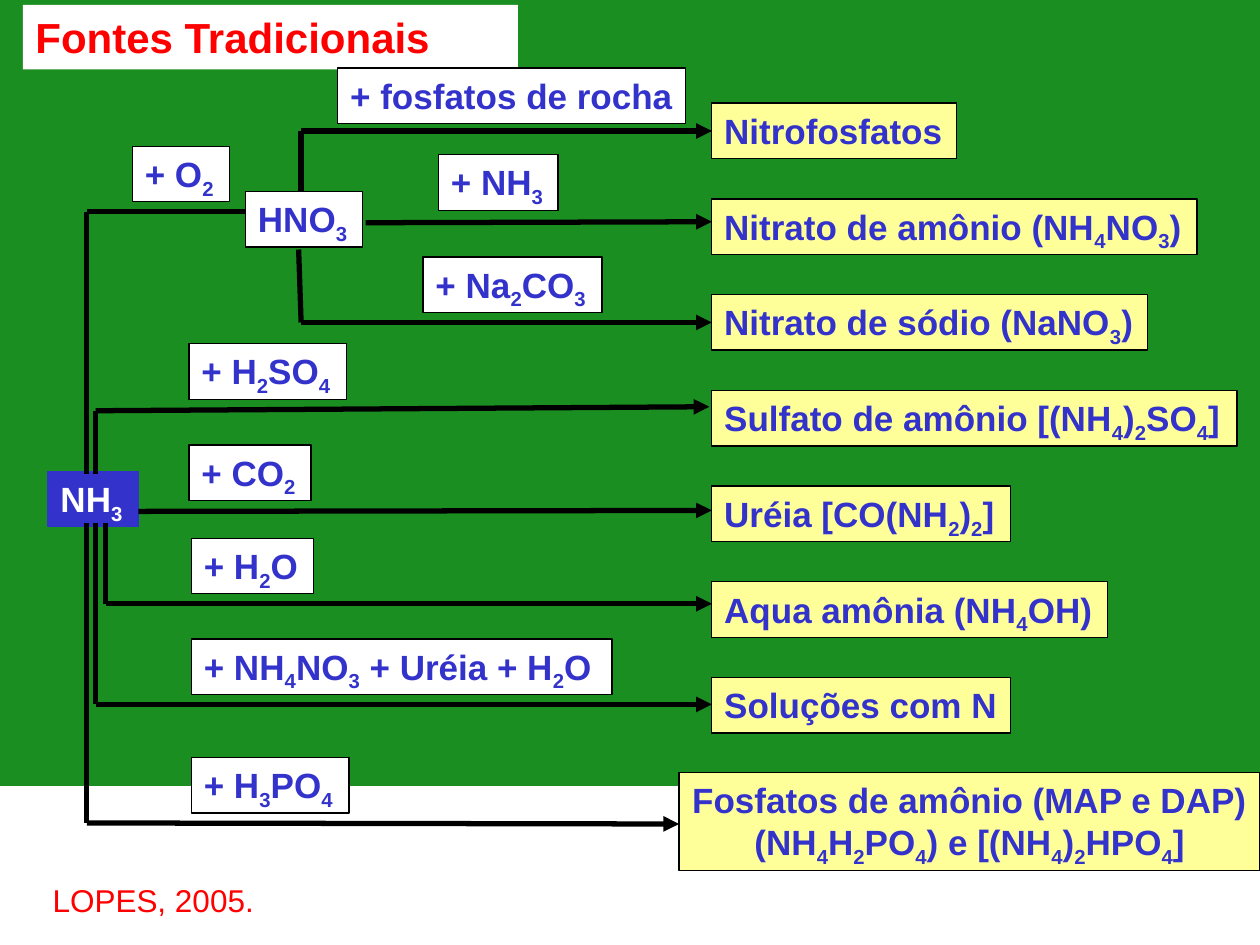
import itertools
from dataclasses import dataclass

import pptx
import pptx.dml.color
import pptx.enum.shapes
import pptx.enum.text
import pptx.oxml
import pptx.oxml.ns
import pptx.util

Cm = pptx.util.Cm
RGB = pptx.dml.color.RGBColor.from_string
PP_ALIGN = pptx.enum.text.PP_ALIGN
LABEL_HEIGHT = 1.12


@dataclass(frozen=True)
class Theme:
    font: str = "Arial"
    green: str = "1B8E21"
    white: str = "FFFFFF"
    yellow: str = "FFFF99"
    blue: str = "3333CC"
    red: str = "FF0000"
    black: str = "000000"
    title_size: int = 24
    label_size: int = 20
    source_size: int = 18
    border: float = 0.75
    route: float = 3


@dataclass(frozen=True)
class Box:
    """A region in centimetres."""
    left: float
    top: float
    width: float
    height: float

    def inner(self, left, top, width, height=LABEL_HEIGHT):
        return Box(self.left + left, self.top + top, width, height)

    def emu(self):
        return Cm(self.left), Cm(self.top), Cm(self.width), Cm(self.height)


THEME = Theme()


def style(paragraph, size, color, bold=True, align=PP_ALIGN.LEFT):
    paragraph.alignment = align
    font = paragraph.font
    font.name, font.size, font.bold = THEME.font, pptx.util.Pt(size), bold
    font.color.rgb = RGB(color)


def write_formula(paragraph, formula):
    """Write every digit of the formula as a subscript."""
    for is_index, letters in itertools.groupby(formula, str.isdigit):
        run = paragraph.add_run()
        run.text = "".join(letters)
        if is_index:
            run.font._element.set("baseline", "-25000")


def add_rectangle(slide, box, fill, line=None):
    rectangle = slide.shapes.add_shape(
        pptx.enum.shapes.MSO_SHAPE.RECTANGLE, *box.emu())
    rectangle.shadow.inherit = False
    rectangle.fill.solid()
    rectangle.fill.fore_color.rgb = RGB(fill)
    if line:
        rectangle.line.color.rgb = RGB(line)
        rectangle.line.width = pptx.util.Pt(THEME.border)
    else:
        rectangle.line.fill.background()
    return rectangle


def add_label(slide, box, formulas, fill=THEME.white, line=THEME.black,
              color=THEME.blue, align=PP_ALIGN.LEFT):
    frame = add_rectangle(slide, box, fill, line).text_frame
    frame.word_wrap = False
    frame.auto_size = pptx.enum.text.MSO_AUTO_SIZE.SHAPE_TO_FIT_TEXT
    frame.vertical_anchor = pptx.enum.text.MSO_ANCHOR.TOP
    for i, formula in enumerate(formulas.split("\n")):
        paragraph = frame.add_paragraph() if i else frame.paragraphs[0]
        write_formula(paragraph, formula)
        style(paragraph, THEME.label_size, color, align=align)


def add_route(slide, box, points, arrow=True):
    """Join the points by straight lines, with an arrowhead on the last."""
    places = [(Cm(box.left + x), Cm(box.top + y)) for x, y in points]
    for start, end in itertools.pairwise(places):
        segment = slide.shapes.add_connector(
            pptx.enum.shapes.MSO_CONNECTOR.STRAIGHT, *start, *end)
        segment.line.color.rgb = RGB(THEME.black)
        segment.line.width = pptx.util.Pt(THEME.route)
        if arrow and end == places[-1]:
            head = pptx.oxml.parse_xml(
                f'<a:tailEnd {pptx.oxml.ns.nsdecls("a")} type="triangle"/>')
            segment.line._get_or_add_ln().append(head)
        segment._element.spPr.append(pptx.oxml.parse_xml(
            f'<a:effectLst {pptx.oxml.ns.nsdecls("a")}/>'))


def add_title(slide, box):
    title = slide.shapes.title
    title.left, title.top, title.width, title.height = box.emu()
    title.fill.solid()
    title.fill.fore_color.rgb = RGB(THEME.white)
    frame = title.text_frame
    frame.text = "Fontes Tradicionais"
    frame.auto_size = pptx.enum.text.MSO_AUTO_SIZE.NONE
    frame.vertical_anchor = pptx.enum.text.MSO_ANCHOR.TOP
    style(frame.paragraphs[0], THEME.title_size, THEME.red)


def add_footer(slide, box):
    add_rectangle(slide, box, THEME.white)
    source = slide.shapes.add_textbox(*box.inner(0.81, 1.78, 4.57, 1.02).emu())
    frame = source.text_frame
    frame.word_wrap = False
    frame.text = "LOPES, 2005."
    style(frame.paragraphs[0], THEME.source_size, THEME.red, bold=False)


def add_products(slide, box):
    pitch, indent = 1.93, 0.66
    products = [
        ("Nitrofosfatos", 4.93),
        ("Nitrato de amônio (NH4NO3)", 9.78),
        ("Nitrato de sódio (NaNO3)", 8.79),
        ("Sulfato de amônio [(NH4)2SO4]", 10.59),
        ("Uréia [CO(NH2)2]", 6.02),
        ("Aqua amônia (NH4OH)", 7.98),
        ("Soluções com N", 6.02),
    ]
    for row, (product, width) in enumerate(products):
        add_label(slide, box.inner(indent, row * pitch, width), product,
                  THEME.yellow)
    phosphates_height = 1.98
    add_label(slide,
              box.inner(0, box.height - phosphates_height, box.width,
                        phosphates_height),
              "Fosfatos de amônio (MAP e DAP)\n(NH4H2PO4) e [(NH4)2HPO4]",
              THEME.yellow, align=PP_ALIGN.CENTER)


def add_ammonia_branch(slide, box):
    add_label(slide, box.inner(0, 5.23, 1.83), "NH3",
              THEME.blue, THEME.blue, THEME.white)
    reagents = [
        ("+ H2SO4", 2.84, 2.66, 3.18),
        ("+ CO2", 2.84, 4.7, 2.46),
        ("+ H2O", 2.89, 6.58, 2.46),
        ("+ NH4NO3 + Uréia + H2O", 2.89, 8.61, 8.48),
        ("+ H3PO4", 2.89, 11, 3.18),
    ]
    for reagent, left, top, width in reagents:
        add_label(slide, box.inner(left, top, width), reagent)

    outer, middle, inner = 0.78, 0.96, 1.16
    above, below = 5.28, 6.27
    add_route(slide, box, [(outer, above), (outer, 0), (3.98, 0)], arrow=False)
    add_route(slide, box, [(middle, above), (middle, 4.01), (13.33, 3.93)])
    add_route(slide, box, [(1.82, 6.04), (box.width, 6.02)])
    add_route(slide, box, [(inner, below), (inner, 7.9), (box.width, 7.9)])
    add_route(slide, box, [(middle, below), (middle, 9.93), (box.width, 9.93)])
    add_route(slide, box, [(outer, below), (outer, 12.32), (12.72, 12.34)])


def add_nitric_acid_branch(slide, box):
    trunk = 4.32
    add_route(slide, box, [(trunk, 2.49), (trunk, 1.27), (box.width, 1.27)])
    add_route(slide, box, [(5.62, 3.12), (box.width, 3.1)])
    add_route(slide, box, [(4.27, 3.66), (trunk, 5.13), (box.width, 5.13)])
    labels = [
        ("HNO3", 3.2, 2.49, 2.36),
        ("+ O2", 0.92, 1.58, 1.96),
        ("+ fosfatos de rocha", 5.06, 0, 7.01),
        ("+ NH3", 7.09, 1.75, 2.41),
        ("+ Na2CO3", 6.78, 3.81, 3.61),
    ]
    for label, left, top, width in labels:
        add_label(slide, box.inner(left, top, width), label)


def main():
    deck = pptx.Presentation()
    deck.slide_width, deck.slide_height = Cm(25.4), Cm(19.05)
    slide = deck.slides.add_slide(deck.slide_layouts.get_by_name("Title Only"))
    slide.background.fill.solid()
    slide.background.fill.fore_color.rgb = RGB(THEME.green)
    add_title(slide, Box(0.46, 0.1, 9.98, 1.3))
    add_footer(slide, Box(0, 15.85, 25.4, 3.2))
    add_products(slide, Box(13.69, 2.08, 11.71, 15.47))
    add_ammonia_branch(slide, Box(0.97, 4.27, 13.38, 12.34))
    add_nitric_acid_branch(slide, Box(1.75, 1.37, 12.6, 5.13))
    deck.save("out.pptx")


if __name__ == "__main__":
    main()
